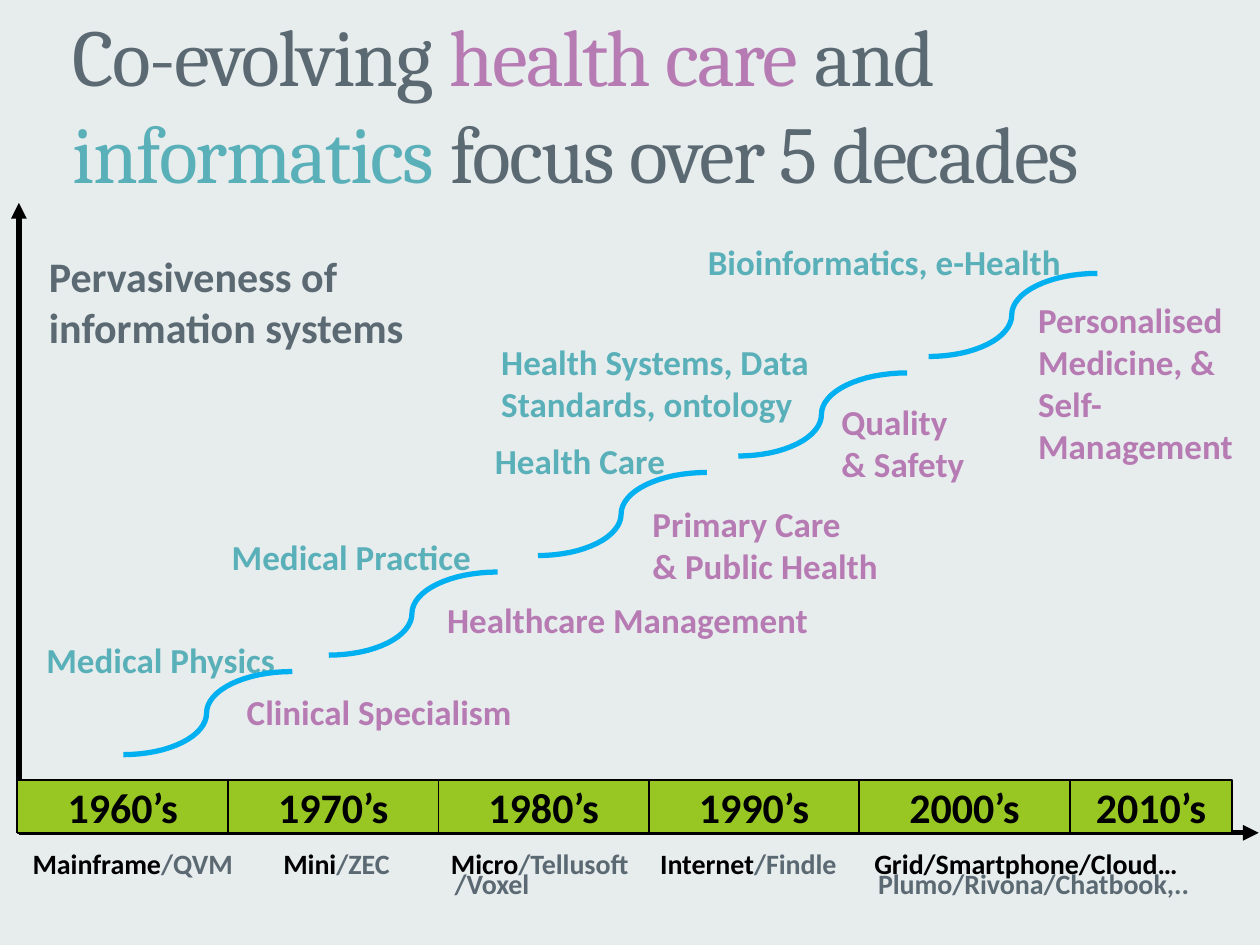
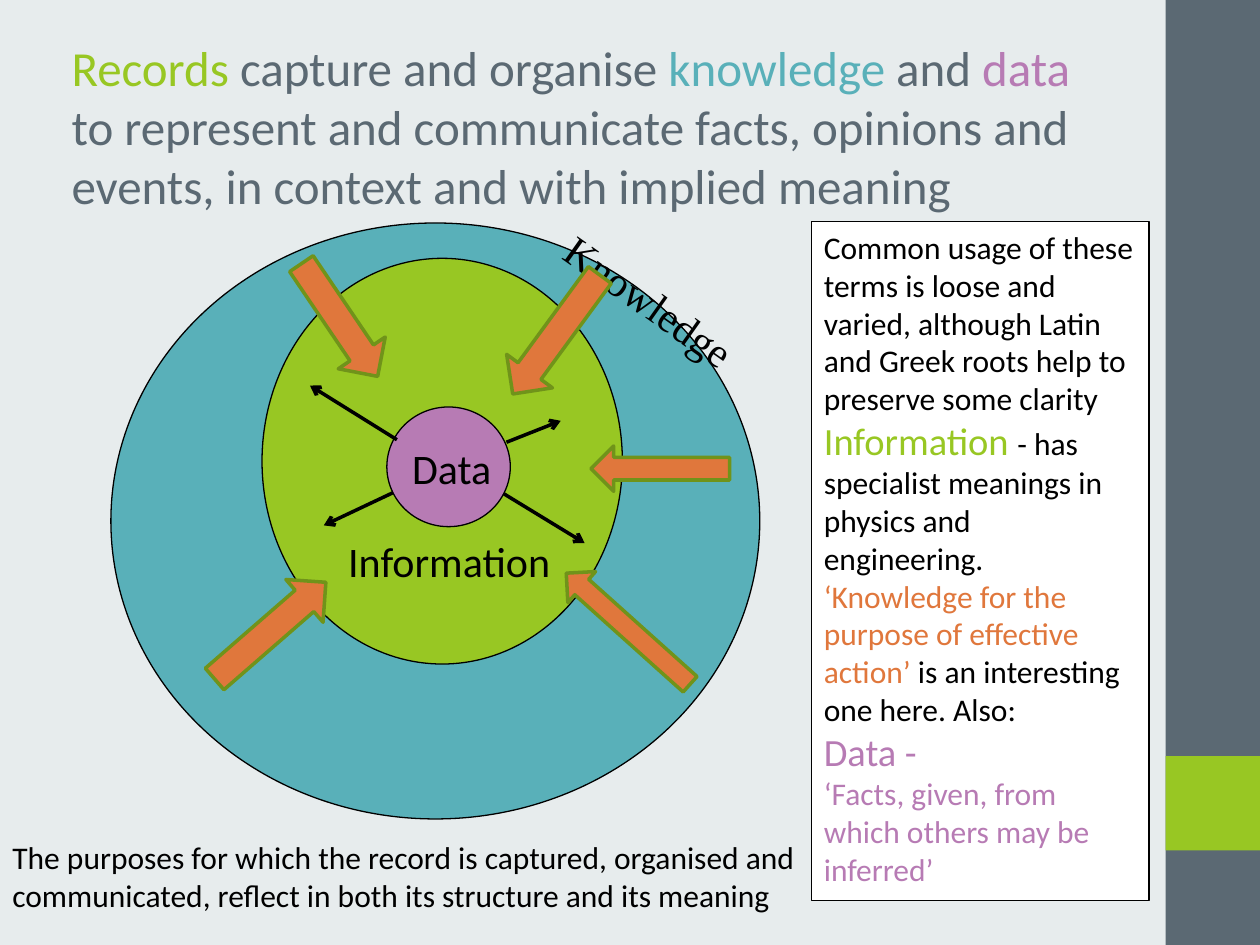
"""Build two slides on health care informatics: a decades chart and a knowledge diagram."""
from math import cos, pi, sin

from lxml.etree import SubElement
from pptx import Presentation
from pptx.dml.color import RGBColor
from pptx.enum.shapes import MSO_CONNECTOR as CONNECTOR, MSO_SHAPE as SHAPE
from pptx.enum.text import MSO_ANCHOR as ANCHOR, PP_ALIGN as ALIGN
from pptx.oxml.ns import qn
from pptx.util import Inches, Pt

COLORS = {
    "paper": "E7ECED", "slate": "5B6973", "mauve": "B77BB4", "teal": "59B0B9",
    "green": "98C723", "orange": "E0773C", "olive": "70931A", "sky": "00B0F0",
    "black": "000000", "white": "FFFFFF",
}

DECADES_TITLE = [
    ("Co-evolving ", "slate"), ("health care ", "mauve"), ("and ", "slate"),
    ("informatics ", "teal"), ("focus over 5 decades", "slate"),
]
DECADES = ["1960’s", "1970’s", "1980’s", "1990’s", "2000’s", "2010’s"]
DECADE_LEFT, DECADE_TOP, DECADE_WIDTH, DECADE_HEIGHT = 0.14, 6.19, 1.67, 0.42
LAST_DECADE_WIDTH = 1.29
AXIS_ORIGIN = (0.15, 6.61)
AXIS_ENDS = [(9.99, 6.61), (0.15, 1.61)]

HEALTH_CARE_TOPICS = [
    (["Clinical Specialism"], (1.86, 5.43, 2.32, 0.44)),
    (["Healthcare Management"], (3.45, 4.7, 3.09, 0.44)),
    (["Primary Care", "& Public Health"], (5.08, 3.94, 4.08, 0.77)),
    (["Quality", "& Safety"], (6.58, 3.13, 2.33, 0.77)),
    (["Personalised Medicine, & Self- Management"], (8.14, 2.32, 1.85, 1.78)),
]
INFORMATICS_TOPICS = [
    (["Medical Physics"], (0.27, 5.02, 2.03, 0.44)),
    (["Medical Practice"], (1.74, 4.2, 2.12, 0.44)),
    (["Health Care"], (3.83, 3.44, 1.56, 0.44)),
    (["Health Systems, Data Standards, ontology"], (3.88, 2.65, 3.54, 0.77)),
    (["Bioinformatics, e-Health"], (5.52, 1.86, 3.03, 0.44)),
]
CURVE_LEFTS = [0.98, 2.61, 4.27, 5.86, 7.37]
CURVE_BOTTOM, CURVE_RISE = 5.99, 0.79
CURVE_LOWER_WIDTH, CURVE_UPPER_WIDTH, CURVE_HALF_HEIGHT = 0.66, 0.68, 0.33
CURVE_STEPS = 16

PLATFORMS = [
    ("Mainframe", "/QVM", 0.16, 6.67),
    ("Mini", "/ZEC", 2.15, 6.67),
    ("Micro", "/Tellusoft", 3.48, 6.67),
    ("", "/Voxel", 3.51, 6.83),
    ("Internet", "/Findle", 5.14, 6.67),
    ("Grid/Smartphone/Cloud…", "", 6.84, 6.67),
    ("", "Plumo/Rivona/Chatbook,..", 6.87, 6.83),
]

RECORDS_TITLE = [
    ("Records ", "green"), ("capture and organise ", "slate"), ("knowledge ", "teal"),
    ("and ", "slate"), ("data ", "mauve"),
    ("to represent and communicate facts, opinions and events, "
     "in context and with implied meaning", "slate"),
]
SIDEBAR = [("slate", (9.25, 0, 0.75, 7.5)), ("green", (9.25, 6, 0.75, 0.75))]
KNOWLEDGE_RINGS = [
    ("teal", (0.88, 1.77, 5.15, 4.73)),
    ("green", (2.08, 2.05, 2.86, 3.22)),
    ("mauve", (3.07, 3.23, 0.98, 0.95)),
]
RING_LABELS = [
    ("Data", (3.12, 3.46, 0.93, 0.5)),
    ("Information", (2.49, 4.2, 2.15, 0.5)),
]
INWARD_ARROWS = [
    ((5.06, 3.17, 0.36, 1.1), 90),
    ((4.82, 4.33, 0.33, 1.32), 131.9),
    ((4.19, 2.07, 0.45, 1.17), 36.2),
    ((1.92, 4.42, 0.45, 1.17), 229),
    ((2.47, 2, 0.45, 1.08), 325.9),
]
OUTWARD_ARROWS = [
    ((3.12, 3.91), (2.57, 4.17)),
    ((4, 3.92), (4.64, 4.31)),
    ((3.15, 3.49), (2.46, 3.06)),
    ((4.02, 3.51), (4.45, 3.34)),
]
PURPOSE = ("The purposes for which the record is captured, organised and communicated, "
           "reflect in both its structure and its meaning")
USAGE_NOTES = [
    [("Common usage of these terms is loose and varied, although Latin and Greek "
      "roots help to preserve some clarity", "black")],
    [("Information ", "green", 22),
     ("- has specialist meanings in physics and engineering.", "black")],
    [("‘Knowledge for the purpose of effective action’ ", "orange"),
     ("is an interesting one here. Also:", "black")],
    [("Data -", "mauve", 22)],
    [("‘Facts, given, from which others may be inferred’", "mauve")],
]


def rgb(color):
    return RGBColor.from_string(COLORS[color])


def inches(values):
    return [Inches(value) for value in values]


def write(shape, paragraphs, size, font="Calibri", bold=False, align=ALIGN.LEFT,
          anchor=ANCHOR.TOP, wrap=True, spacing=None):
    text_frame = shape.text_frame
    text_frame.word_wrap = wrap
    text_frame.vertical_anchor = anchor
    for index, runs in enumerate(paragraphs):
        paragraph = text_frame.add_paragraph() if index else text_frame.paragraphs[0]
        paragraph.alignment = align
        for text, color, *own_size in runs:
            run = paragraph.add_run()
            run.text = text
            run.font.name = font
            run.font.size = Pt(own_size[0] if own_size else size)
            run.font.bold = bold
            run.font.color.rgb = rgb(color)
            if spacing is not None:
                run.font._element.set("spc", str(spacing))


def add_text(slide, box, paragraphs, size, **style):
    shape = slide.shapes.add_textbox(*inches(box))
    write(shape, paragraphs, size, **style)
    return shape


def add_filled(slide, kind, box, fill, line=None, line_width=0.75):
    shape = slide.shapes.add_shape(kind, *inches(box))
    shape.shadow.inherit = False
    shape.fill.solid()
    shape.fill.fore_color.rgb = rgb(fill)
    if line:
        shape.line.color.rgb = rgb(line)
        shape.line.width = Pt(line_width)
    else:
        shape.line.fill.background()
    return shape


def add_arrow(slide, start, end, width, head):
    connector = slide.shapes.add_connector(CONNECTOR.STRAIGHT, *inches((*start, *end)))
    connector.line.color.rgb = rgb("black")
    connector.line.width = Pt(width)
    SubElement(connector.line._get_or_add_ln(), qn("a:tailEnd"), type=head)
    SubElement(connector._element.spPr, qn("a:effectLst"))


def add_growth_curve(slide, left, bottom):
    middle_x = left + CURVE_LOWER_WIDTH
    middle_y = bottom - CURVE_HALF_HEIGHT
    angles = [step * pi / 2 / CURVE_STEPS for step in range(CURVE_STEPS + 1)]
    lower = [(left + CURVE_LOWER_WIDTH * sin(angle),
              middle_y + CURVE_HALF_HEIGHT * cos(angle)) for angle in angles]
    upper = [(middle_x + CURVE_UPPER_WIDTH * (1 - cos(angle)),
              middle_y - CURVE_HALF_HEIGHT * sin(angle)) for angle in angles[1:]]
    points = [inches(point) for point in lower + upper]
    builder = slide.shapes.build_freeform(*points[0])
    builder.add_line_segments(points[1:], close=False)
    curve = builder.convert_to_shape()
    curve.shadow.inherit = False
    curve.fill.background()
    curve.line.color.rgb = rgb("sky")
    curve.line.width = Pt(3)


def add_slide(presentation):
    slide = presentation.slides.add_slide(presentation.slide_layouts[6])
    slide.background.fill.solid()
    slide.background.fill.fore_color.rgb = rgb("paper")
    return slide


def build_decades(presentation):
    slide = add_slide(presentation)
    add_text(slide, (0.48, 0.28, 9.22, 1.07), [DECADES_TITLE], 46, font="Cambria",
             anchor=ANCHOR.MIDDLE, spacing=-100)
    add_text(slide, (0.29, 1.94, 3.58, 0.91),
             [[("Pervasiveness of information systems", "slate")]], 24, bold=True)
    for end in AXIS_ENDS:
        add_arrow(slide, AXIS_ORIGIN, end, 3, "triangle")
    for index, decade in enumerate(DECADES):
        width = LAST_DECADE_WIDTH if decade == DECADES[-1] else DECADE_WIDTH
        box = (DECADE_LEFT + index * DECADE_WIDTH, DECADE_TOP, width, DECADE_HEIGHT)
        cell = add_filled(slide, SHAPE.RECTANGLE, box, "green", "black", 1)
        write(cell, [[(decade, "black")]], 24, bold=True, align=ALIGN.CENTER,
              anchor=ANCHOR.MIDDLE, wrap=False)
    for color, topics in (("mauve", HEALTH_CARE_TOPICS), ("teal", INFORMATICS_TOPICS)):
        for lines, box in topics:
            add_text(slide, box, [[(line, color)] for line in lines], 20, bold=True,
                     wrap=box[3] > 0.5)
    for index, left in enumerate(CURVE_LEFTS):
        add_growth_curve(slide, left, CURVE_BOTTOM - index * CURVE_RISE)
    for platform, maker, left, top in PLATFORMS:
        runs = [run for run in ((platform, "black"), (maker, "slate")) if run[0]]
        add_text(slide, (left, top, 2.98, 0.37), [runs], 16, bold=True)


def build_records(presentation):
    slide = add_slide(presentation)
    for color, box in SIDEBAR:
        add_filled(slide, SHAPE.RECTANGLE, box, color)
    for color, box in KNOWLEDGE_RINGS:
        add_filled(slide, SHAPE.OVAL, box, color, "black")
    knowledge = add_text(slide, (4.16, 2.14, 2, 0.48), [[("Knowledge", "black")]], 24,
                         font="Times New Roman", align=ALIGN.CENTER)
    knowledge.rotation = 35.3
    for label, box in RING_LABELS:
        add_text(slide, box, [[(label, "black")]], 24, align=ALIGN.CENTER)
    for box, rotation in INWARD_ARROWS:
        arrow = add_filled(slide, SHAPE.DOWN_ARROW, box, "orange", "olive", 2)
        arrow.rotation = rotation
    for start, end in OUTWARD_ARROWS:
        add_arrow(slide, start, end, 2, "arrow")
    add_text(slide, (0, 6.6, 6.64, 0.71), [[(PURPOSE, "black")]], 18)
    card = add_filled(slide, SHAPE.RECTANGLE, (6.44, 1.76, 2.68, 5.39), "white", "black")
    write(card, USAGE_NOTES, 18)
    add_text(slide, (0.47, 0.25, 8.35, 1.51), [RECORDS_TITLE], 28)


def main():
    presentation = Presentation()
    presentation.slide_width, presentation.slide_height = Inches(10), Inches(7.5)
    build_decades(presentation)
    build_records(presentation)
    presentation.save("out.pptx")


if __name__ == "__main__":
    main()
